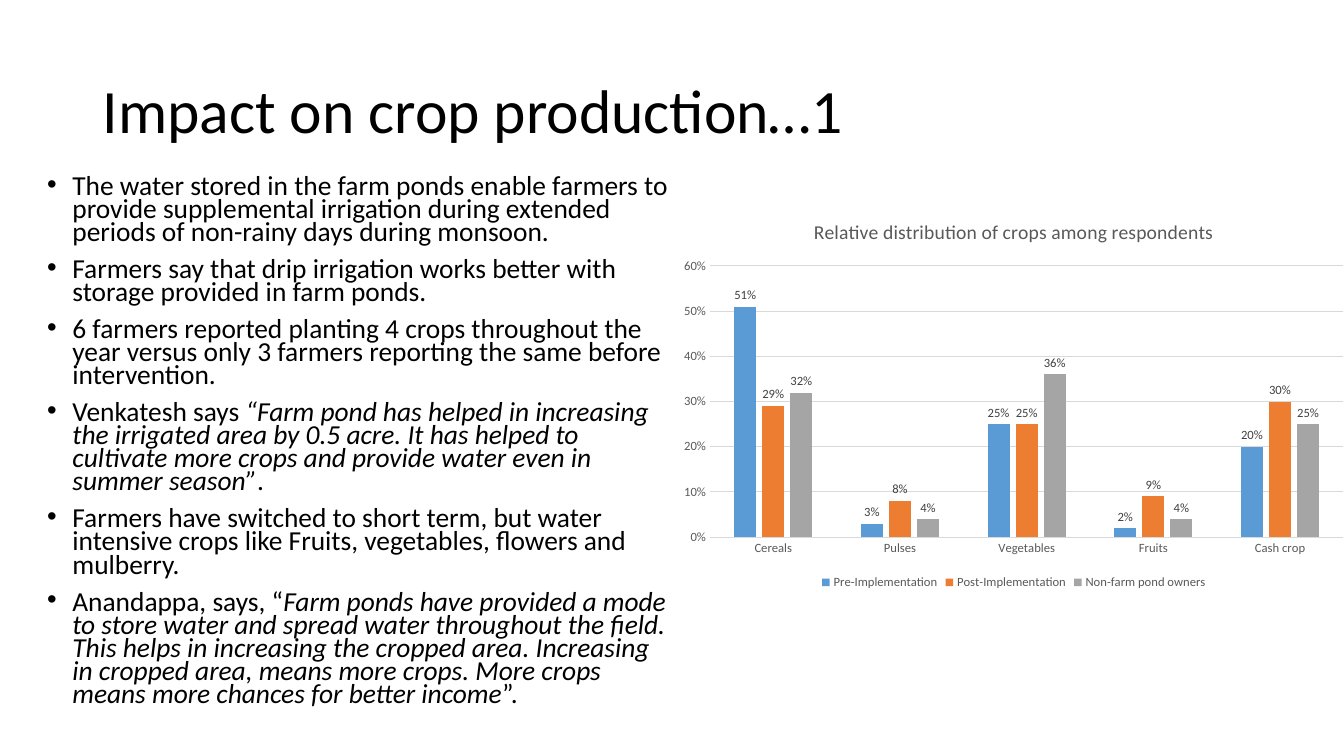
from lxml.etree import SubElement
from pptx import Presentation
from pptx.chart.data import CategoryChartData
from pptx.dml.color import RGBColor
from pptx.enum.chart import XL_CHART_TYPE as ChartType
from pptx.enum.chart import XL_LABEL_POSITION as LabelPosition
from pptx.enum.chart import XL_LEGEND_POSITION as LegendPosition
from pptx.enum.chart import XL_TICK_MARK as TickMark
from pptx.enum.text import MSO_ANCHOR, PP_ALIGN
from pptx.oxml.ns import qn
from pptx.util import Inches, Pt

HEADING = "Impact on crop production…1"
# Each point is a list of (text, italic) runs.
POINTS = [
    [("The water stored in the farm ponds enable farmers to provide supplemental irrigation "
      "during extended periods of non-rainy days during monsoon.", False)],
    [("Farmers say that drip irrigation works better with storage provided in farm ponds.", False)],
    [("6 farmers reported planting 4 crops throughout the year versus only 3 farmers "
      "reporting the same before intervention.", False)],
    [("Venkatesh says ", False),
     ("“Farm pond has helped in increasing the irrigated area by 0.5 acre. It has helped to "
      "cultivate more crops and provide water even in summer season”", True),
     (".", False)],
    [("Farmers have switched to short term, but water intensive crops like Fruits, "
      "vegetables, flowers and mulberry.", False)],
    [("Anandappa, says, “", False),
     ("Farm ponds have provided a mode to store water and spread water throughout the field. "
      "This helps in increasing the cropped area. Increasing in cropped area, means more crops. "
      "More crops means more chances for better income", True),
     ("”.", False)],
]
CHART_TITLE = "Relative distribution of crops among respondents"
CROPS = ["Cereals", "Pulses", "Vegetables", "Fruits", "Cash crop"]

BLACK = RGBColor(0x00, 0x00, 0x00)
DARK_GREY = RGBColor(0x40, 0x40, 0x40)
GREY = RGBColor(0x59, 0x59, 0x59)
LIGHT_GREY = RGBColor(0xD9, 0xD9, 0xD9)
BLUE = RGBColor(0x5B, 0x9B, 0xD5)
ORANGE = RGBColor(0xED, 0x7D, 0x31)
MID_GREY = RGBColor(0xA5, 0xA5, 0xA5)
FONT = "Calibri"

GROUPS = [
    ("Pre-Implementation", BLUE, [0.51, 0.03, 0.25, 0.02, 0.20]),
    ("Post-Implementation", ORANGE, [0.29, 0.08, 0.25, 0.09, 0.30]),
    ("Non-farm pond owners", MID_GREY, [0.32, 0.04, 0.36, 0.04, 0.25]),
]


def set_font(font, size, color, italic=False):
    font.name, font.size, font.italic = FONT, Pt(size), italic
    font.color.rgb = color


def set_line(line, color):
    line.color.rgb = color
    line.width = Pt(0.75)


def add_heading(slide):
    heading = slide.shapes.title
    heading.left, heading.top, heading.width, heading.height = map(Inches, (0.92, 0.4, 11.5, 1.45))
    frame = heading.text_frame
    frame.text = HEADING
    frame.vertical_anchor = MSO_ANCHOR.MIDDLE
    paragraph = frame.paragraphs[0]
    paragraph.alignment = PP_ALIGN.LEFT
    paragraph.line_spacing = 0.9
    set_font(paragraph.runs[0].font, 44, BLACK)


def add_points(slide):
    frame = slide.shapes.add_textbox(*map(Inches, (0.37, 1.71, 6.4, 5.62))).text_frame
    frame.word_wrap = True
    for index, point in enumerate(POINTS):
        paragraph = frame.add_paragraph() if index else frame.paragraphs[0]
        paragraph.line_spacing = 0.7
        paragraph.space_before = Pt(10)
        for text, italic in point:
            run = paragraph.add_run()
            run.text = text
            set_font(run.font, 19.6, BLACK, italic)
        props = paragraph._p.get_or_add_pPr()
        props.set("marL", str(Inches(0.25)))
        props.set("indent", str(Inches(-0.25)))
        SubElement(props, qn("a:buFont"), typeface="Arial")
        SubElement(props, qn("a:buChar"), char="•")


def add_crop_chart(slide):
    data = CategoryChartData(number_format="0%")
    data.categories = CROPS
    for name, _, shares in GROUPS:
        data.add_series(name, shares)
    chart = slide.shapes.add_chart(
        ChartType.COLUMN_CLUSTERED, *map(Inches, (6.65, 2, 6.81, 3.89)), data).chart
    set_font(chart.font, 10, BLACK)

    chart.has_title = True
    chart.chart_title.include_in_layout = False
    title = chart.chart_title.text_frame
    title.text = CHART_TITLE
    set_font(title.paragraphs[0].runs[0].font, 14, GREY)
    title.paragraphs[0].runs[0].font.bold = False

    chart.has_legend = True
    chart.legend.position = LegendPosition.BOTTOM
    chart.legend.include_in_layout = False
    set_font(chart.legend.font, 9, GREY)

    crop_axis, share_axis = chart.category_axis, chart.value_axis
    for axis in (crop_axis, share_axis):
        axis.major_tick_mark = axis.minor_tick_mark = TickMark.NONE
        set_font(axis.tick_labels.font, 9, GREY)
    set_line(crop_axis.format.line, LIGHT_GREY)
    set_line(share_axis.major_gridlines.format.line, LIGHT_GREY)
    share_axis.format.line.fill.background()
    share_axis.minimum_scale, share_axis.maximum_scale, share_axis.major_unit = 0, 0.6, 0.1
    share_axis.tick_labels.number_format = "0%"
    share_axis.tick_labels.number_format_is_linked = False

    plot = chart.plots[0]
    plot.gap_width, plot.overlap, plot.vary_by_categories = 219, -27, False
    for series, (_, color, _) in zip(plot.series, GROUPS):
        series.format.fill.solid()
        series.format.fill.fore_color.rgb = color
        labels = series.data_labels
        labels.show_value = True
        labels.position = LabelPosition.OUTSIDE_END
        labels.number_format = "0%"
        labels.number_format_is_linked = False
        set_font(labels.font, 9, DARK_GREY)


def main():
    deck = Presentation()
    deck.slide_width, deck.slide_height = Inches(13.33), Inches(7.5)
    slide = deck.slides.add_slide(deck.slide_layouts[5])
    add_heading(slide)
    add_points(slide)
    add_crop_chart(slide)
    deck.save("out.pptx")


if __name__ == "__main__":
    main()
